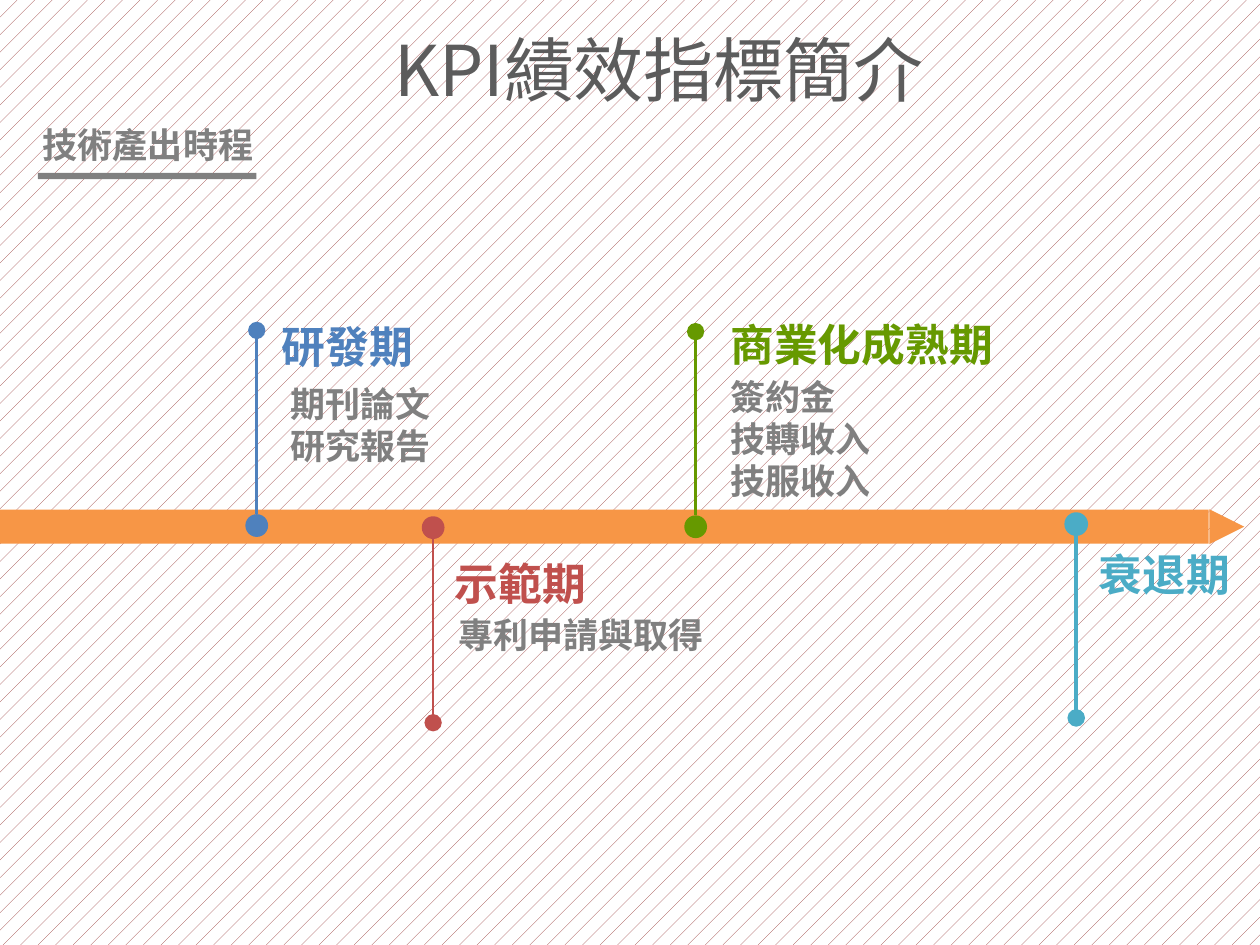
from dataclasses import dataclass

from lxml import etree
from pptx import Presentation
from pptx.dml.color import RGBColor
from pptx.enum.dml import MSO_PATTERN
from pptx.enum.shapes import MSO_CONNECTOR, MSO_SHAPE
from pptx.enum.text import MSO_ANCHOR, MSO_AUTO_SIZE, PP_ALIGN
from pptx.oxml.ns import qn
from pptx.util import Pt

DOTS = MSO_PATTERN.PERCENT_5
STRAIGHT = MSO_CONNECTOR.STRAIGHT
RECTANGLE, ELLIPSE = MSO_SHAPE.RECTANGLE, MSO_SHAPE.OVAL
TRIANGLE = MSO_SHAPE.ISOSCELES_TRIANGLE
MIDDLE, TOP = MSO_ANCHOR.MIDDLE, MSO_ANCHOR.TOP
NO_FIT, GROW = MSO_AUTO_SIZE.NONE, MSO_AUTO_SIZE.SHAPE_TO_FIT_TEXT
LEFT = PP_ALIGN.LEFT


@dataclass(frozen=True)
class Theme:
    title_font: str = "Noto Sans CJK SC"
    text_font: str = "Quicksand"
    title_size: int = 40
    heading_size: int = 25
    note_size: int = 20
    title: str = "5C5C5C"
    note: str = "808080"
    axis: str = "F79646"
    pattern: str = "953734"
    paper: str = "FFFFFF"
    research: str = "4F81BD"
    pilot: str = "C0504D"
    mature: str = "669900"
    decline: str = "4BACC6"


def color(value):
    return RGBColor.from_string(value)


def write(frame, text, *, font, size, ink, bold=False):
    """Fill a text frame, one left-aligned paragraph for each line."""
    for index, line in enumerate(text.split("\n")):
        para = frame.add_paragraph() if index else frame.paragraphs[0]
        para.alignment = LEFT
        span = para.add_run()
        span.text = line
        span.font.name = font
        span.font.size = Pt(size)
        span.font.bold = bold
        span.font.color.rgb = color(ink)
        east = etree.SubElement(span._r.get_or_add_rPr(), qn("a:ea"))
        east.set("typeface", font)


class TimelinePage:
    def __init__(self, deck, theme):
        self.theme = theme
        self.page = deck.slides.add_slide(deck.slide_layouts[1])
        fill = self.page.background.fill
        fill.patterned()
        fill.pattern = DOTS
        fill.fore_color.rgb = color(theme.pattern)
        fill.back_color.rgb = color(theme.paper)

    def placeholder(self, holder, text, area, anchor, **style):
        holder.left, holder.top, holder.width, holder.height = map(Pt, area)
        frame = holder.text_frame
        frame.auto_size = NO_FIT
        frame.vertical_anchor = anchor
        write(frame, text, **style)
        return frame.paragraphs[0]

    def title(self, text, area):
        theme = self.theme
        self.placeholder(self.page.shapes.title, text, area, TOP,
                         font=theme.title_font, size=theme.title_size, ink=theme.title)

    def subtitle(self, text, area):
        theme = self.theme
        para = self.placeholder(self.page.placeholders[1], text, area, MIDDLE,
                                font=theme.text_font, size=theme.note_size,
                                ink=theme.note, bold=True)
        # Plain line: no bullet and no hanging indent
        properties = para._p.get_or_add_pPr()
        properties.set("marL", "0")
        properties.set("indent", "0")
        etree.SubElement(properties, qn("a:buNone"))

    def label(self, text, area, size, ink):
        box = self.page.shapes.add_textbox(*map(Pt, area))
        frame = box.text_frame
        frame.word_wrap = False
        frame.auto_size = GROW
        write(frame, text, font=self.theme.text_font, size=size, ink=ink, bold=True)

    def shape(self, kind, area, ink, parent=None, outline=0):
        shapes = (parent or self.page).shapes
        shape = shapes.add_shape(kind, *map(Pt, area))
        shape.shadow.inherit = False
        shape.fill.solid()
        shape.fill.fore_color.rgb = color(ink)
        if outline:
            shape.line.color.rgb = color(ink)
            shape.line.width = Pt(outline)
        else:
            shape.line.fill.background()
        return shape

    def stem(self, parent, x, start, end, ink, width):
        line = parent.shapes.add_connector(STRAIGHT, Pt(x), Pt(start), Pt(x), Pt(end))
        line.line.color.rgb = color(ink)
        line.line.width = Pt(width)
        tail = etree.SubElement(line.line._get_or_add_ln(), qn("a:tailEnd"))
        for key, value in (("type", "oval"), ("w", "lg"), ("len", "lg")):
            tail.set(key, value)
        etree.SubElement(line._element.spPr, qn("a:effectLst"))

    def pin(self, x, y, direction, ink, size=13, width=1.5, outline=0):
        """Dot on the axis with a stem going up (-1) or down (1)."""
        group = self.page.shapes.add_group_shape()
        radius = size / 2
        self.shape(ELLIPSE, (x - radius, y - radius, size, size), ink, group, outline)
        start = y + direction * radius
        self.stem(group, x, start, start + direction * 105, ink, width)


def main():
    theme = Theme()
    deck = Presentation()
    deck.slide_width, deck.slide_height = Pt(720), Pt(540)
    timeline = TimelinePage(deck, theme)

    # Title and underlined section name
    timeline.title("KPI績效指標簡介", (218, 11.5, 328.5, 55.5))
    timeline.subtitle("技術產出時程", (17.3, 65.5, 138.2, 34.6))
    timeline.shape(RECTANGLE, (21.6, 98.8, 125, 3.6), theme.note)

    # Time axis with its arrow tip
    timeline.shape(RECTANGLE, (0, 291.2, 690.7, 19.5), theme.axis)
    tip = timeline.shape(TRIANGLE, (691, 291, 20, 20), theme.axis)
    tip.rotation = 90

    # Pins: centre x, centre y, direction, colour
    timeline.pin(146.7, 300.3, -1, theme.research)
    timeline.pin(247.5, 301.5, 1, theme.pilot)
    timeline.pin(397.5, 301, -1, theme.mature)
    timeline.pin(615, 299.5, 1, theme.decline, size=11.5, width=2, outline=2)

    # Stage names
    for text, left, top, width, ink in (
        ("研發期", 154, 179.3, 90, theme.research),
        ("示範期", 252.7, 314.6, 90, theme.pilot),
        ("商業化成熟期", 410.4, 178, 166.3, theme.mature),
        ("衰退期", 620.7, 309.6, 90, theme.decline),
    ):
        timeline.label(text, (left, top, width, 37.4), theme.heading_size, ink)

    # Outputs of each stage
    for text, left, top, width, height in (
        ("期刊論文\n研究報告", 159, 215.3, 95, 55.4),
        ("專利申請與取得", 254.9, 347, 156.2, 31.7),
        ("簽約金\n技轉收入\n技服收入", 410.4, 211, 95, 80),
    ):
        timeline.label(text, (left, top, width, height), theme.note_size, theme.note)

    deck.save("out.pptx")


if __name__ == "__main__":
    main()
